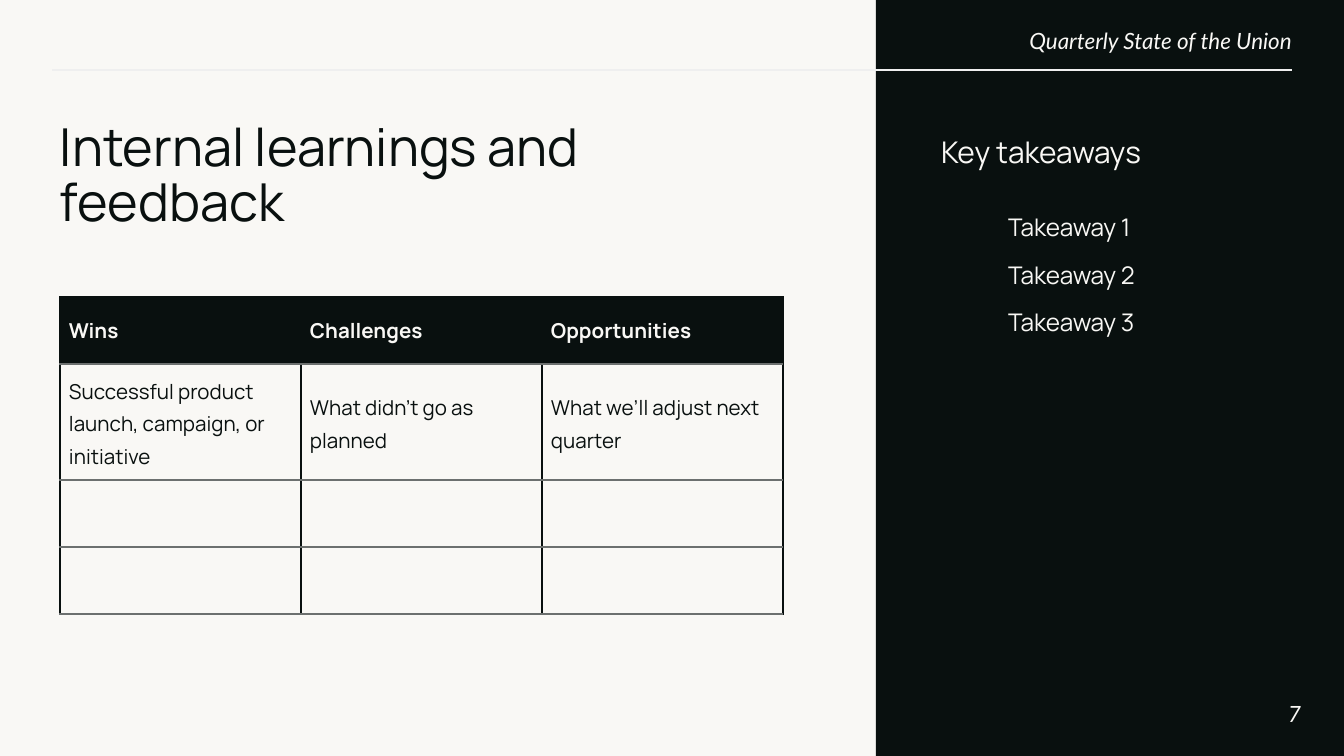
from lxml.etree import SubElement
from pptx import Presentation
from pptx.dml.color import RGBColor
from pptx.enum.shapes import MSO_CONNECTOR, MSO_SHAPE
from pptx.enum.text import MSO_ANCHOR as ANCHOR, PP_ALIGN as ALIGN
from pptx.oxml.ns import qn
from pptx.util import Pt

PX = 914400 / 134.4
COLORS = {"paper": "F9F8F5", "ink": "09100F", "rule": "EFEFEF", "grid": "6C706F"}


def px(*lengths):
    return [round(n * PX) for n in lengths]


def write(tf, *lines, size, color="ink", font="Manrope", bold=False, italic=False,
          align=ALIGN.LEFT, anchor=ANCHOR.TOP, spacing=None, gap=0, indent=0, inset=0):
    tf.word_wrap = True
    tf.vertical_anchor = anchor
    tf.margin_left = tf.margin_top = tf.margin_right = tf.margin_bottom = px(inset)[0]
    for i, line in enumerate(lines):
        p = tf.add_paragraph() if i else tf.paragraphs[0]
        p.alignment = align
        p.line_spacing = spacing
        p.space_before = Pt(gap if i else 0)
        if indent:
            p._p.get_or_add_pPr().set("marL", str(px(indent)[0]))
        r = p.add_run()
        r.text = line
        r.font.name, r.font.size = font, Pt(size)
        r.font.bold, r.font.italic = bold, italic
        r.font.color.rgb = RGBColor.from_string(COLORS[color])


prs = Presentation()
prs.slide_width, prs.slide_height = px(1344, 756)
s = prs.slides.add_slide(prs.slide_layouts[6])
s.background.fill.solid()
s.background.fill.fore_color.rgb = RGBColor.from_string(COLORS["paper"])

panel = s.shapes.add_shape(MSO_SHAPE.RECTANGLE, *px(876, 0, 468, 756))
panel.shadow.inherit = False
panel.fill.solid()
panel.fill.fore_color.rgb = RGBColor.from_string(COLORS["ink"])
panel.line.fill.background()

rule = s.shapes.add_connector(MSO_CONNECTOR.STRAIGHT, *px(1292, 70, 52, 70))
rule.line.color.rgb = RGBColor.from_string(COLORS["rule"])
rule.line.width = Pt(0.75)
SubElement(rule._element.spPr, qn("a:effectLst"))

footer = dict(size=12, color="paper", font="Lato", italic=True, align=ALIGN.RIGHT)
texts = [
    ((774, 27, 518, 24), ["Quarterly State of the Union"], footer),
    ((60, 122, 750, 69), ["Internal learnings and feedback"], dict(size=28, spacing=0.88)),
    ((941, 128, 339, 58), ["Key takeaways"], dict(size=16, color="paper", spacing=1.15)),
    ((941, 208, 339, 58), ["Takeaway 1", "Takeaway 2", "Takeaway 3"],
     dict(size=13, color="paper", spacing=1.15, gap=7.5, indent=67)),
    ((1220, 685, 81, 58), ["7"], dict(footer, anchor=ANCHOR.MIDDLE)),
]
for box, lines, style in texts:
    write(s.shapes.add_textbox(*px(*box)).text_frame, *lines, **style)

rows = [
    ["Wins", "Challenges", "Opportunities"],
    ["Successful product launch, campaign, or initiative",
     "What didn’t go as planned", "What we’ll adjust next quarter"],
    ["", "", ""],
    ["", "", ""],
]
heights = px(67, 116, 67, 67)
table = s.shapes.add_table(len(rows), 3, *px(60, 297, 723, 317)).table
table.first_row = table.horz_banding = False
for col in table.columns:
    col.width = px(241)[0]
for i, row in enumerate(rows):
    table.rows[i].height = heights[i]
    header = i == 0
    for j, text in enumerate(row):
        cell = table.cell(i, j)
        cell.vertical_anchor = ANCHOR.MIDDLE
        tcPr = cell._tc.get_or_add_tcPr()
        top = ("ink", 0.75) if header else ("grid", 1)
        borders = {"lnL": ("ink", 0.75), "lnR": ("ink", 0.75), "lnT": top, "lnB": ("grid", 1)}
        for side, (color, width) in borders.items():
            ln = SubElement(tcPr, qn(f"a:{side}"), w=str(Pt(width)))
            SubElement(SubElement(ln, qn("a:solidFill")), qn("a:srgbClr"), val=COLORS[color])
        if header:
            cell.fill.solid()
            cell.fill.fore_color.rgb = RGBColor.from_string(COLORS["ink"])
        else:
            cell.fill.background()
        if text:
            write(cell.text_frame, text, size=11, color="paper" if header else "ink",
                  bold=header, spacing=None if header else 1.15)
        cell.margin_left = cell.margin_top = cell.margin_right = cell.margin_bottom = px(9)[0]
        cell.vertical_anchor = ANCHOR.MIDDLE

prs.save("out.pptx")
